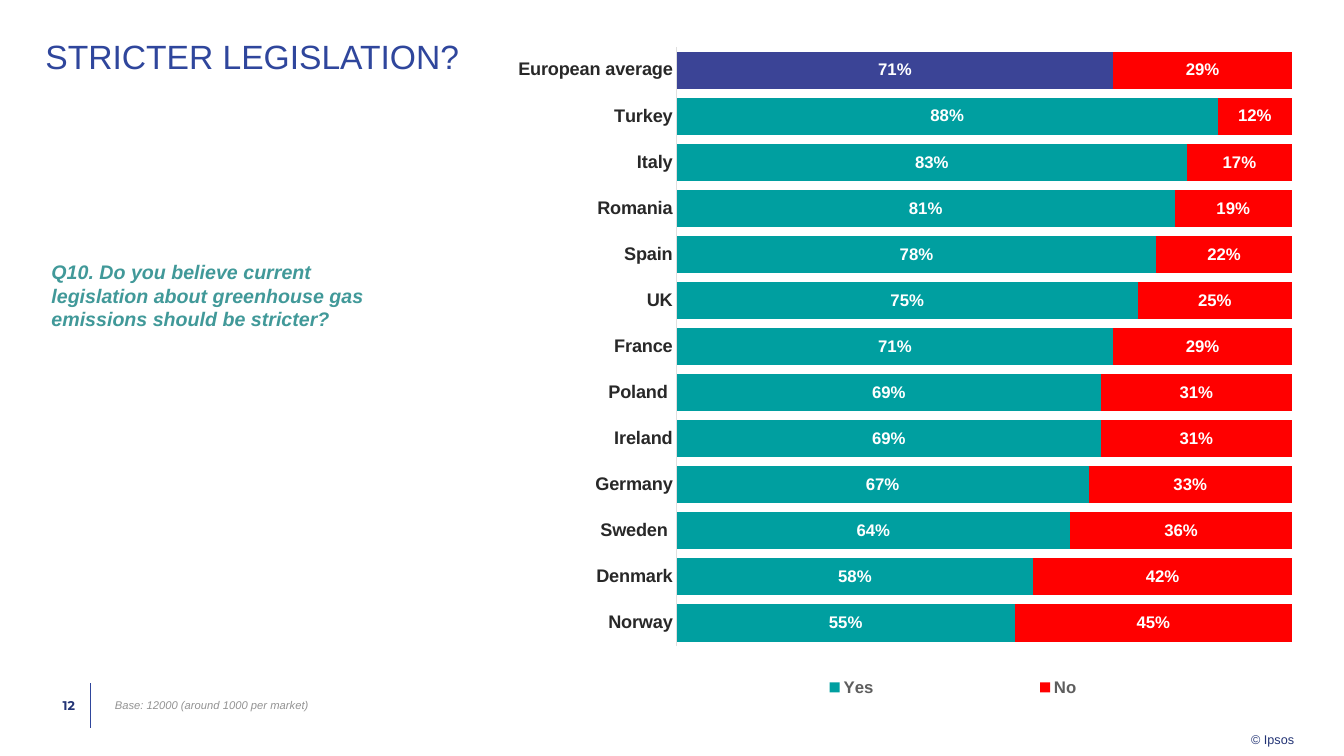
import lxml.etree
import pptx
import pptx.chart.data
import pptx.dml.color
import pptx.enum.chart
import pptx.enum.shapes
import pptx.enum.text
import pptx.oxml.ns
import pptx.util

PX = 9144
COLORS = {
    "title": "2F469C", "navy": "233475", "question": "419999",
    "base": "939393", "average": "3B4496", "yes": "009FA0", "no": "FF0000",
    "label": "282828", "legend": "5E5E5E", "axis": "DFDFDF", "white": "FFFFFF",
}
ANSWERS = [
    ("European average", 0.71, 0.29),
    ("Turkey", 0.88, 0.12),
    ("Italy", 0.83, 0.17),
    ("Romania", 0.81, 0.19),
    ("Spain", 0.78, 0.22),
    ("UK", 0.75, 0.25),
    ("France", 0.71, 0.29),
    ("Poland ", 0.69, 0.31),
    (" Ireland", 0.69, 0.31),
    ("Germany", 0.67, 0.33),
    ("Sweden ", 0.64, 0.36),
    ("Denmark", 0.58, 0.42),
    ("Norway", 0.55, 0.45),
]
ANCHOR = pptx.enum.text.MSO_ANCHOR


def style(font, size, color, bold=False, italic=False, name="Arial"):
    font.name = name
    font.size = pptx.util.Pt(size)
    font.bold = bold
    font.italic = italic
    font.color.rgb = pptx.dml.color.RGBColor.from_string(COLORS[color])


def place(parent, index, inner, **fractions):
    qn = pptx.oxml.ns.qn
    for old_layout in parent.findall(qn("c:layout")):
        parent.remove(old_layout)
    layout = lxml.etree.Element(qn("c:layout"))
    manual = lxml.etree.SubElement(layout, qn("c:manualLayout"))
    if inner:
        lxml.etree.SubElement(manual, qn("c:layoutTarget"), val="inner")
    for side in "xy":
        lxml.etree.SubElement(manual, qn(f"c:{side}Mode"), val="edge")
    for side, fraction in fractions.items():
        lxml.etree.SubElement(manual, qn(f"c:{side}"), val=str(fraction))
    parent.insert(index, layout)


deck = pptx.Presentation()
deck.slide_width = 1333 * PX
deck.slide_height = 750 * PX
page = deck.slides.add_slide(deck.slide_layouts[6])

divider = page.shapes.add_connector(
    pptx.enum.shapes.MSO_CONNECTOR.STRAIGHT, 90 * PX, 678 * PX, 90 * PX, 722 * PX)
divider.line.color.rgb = pptx.dml.color.RGBColor.from_string(COLORS["title"])
divider.line.width = pptx.util.Pt(0.5)
lxml.etree.SubElement(divider._element.spPr, pptx.oxml.ns.qn("a:effectLst"))

texts = [
    ("© Ipsos", (1241, 722, 43, 19), (0, 4, 0, 0), ANCHOR.TOP,
     dict(size=9, color="navy")),
    ("12 ", (45, 678, 45, 43), (0, 0, 12, 0), ANCHOR.MIDDLE,
     dict(size=9, color="navy", bold=True, name="Montserrat")),
    ("STRICTER LEGISLATION?", (45, 40, 469, 42), (0, 0, 0, 0), ANCHOR.TOP,
     dict(size=24, color="title")),
    ("Q10. Do you believe current legislation about greenhouse gas "
     "emissions should be stricter?", (51, 258, 331, 71), (0, 0, 0, 0), ANCHOR.TOP,
     dict(size=14, color="question", bold=True, italic=True)),
    ("Base: 12000 (around 1000 per market)", (104, 678, 278, 43),
     (10, 5, 10, 5), ANCHOR.MIDDLE, dict(size=8, color="base", italic=True)),
]
for words, area, insets, anchor, look in texts:
    box = page.shapes.add_textbox(*(length * PX for length in area))
    frame = box.text_frame
    frame.word_wrap = words != "© Ipsos"
    frame.vertical_anchor = anchor
    (frame.margin_left, frame.margin_top,
     frame.margin_right, frame.margin_bottom) = (inset * PX for inset in insets)
    para = frame.paragraphs[0]
    para.text = words
    style(para.font, **look)
    if look["color"] == "title":
        para.line_spacing = 0.9
    if words == "12 ":
        para.alignment = pptx.enum.text.PP_ALIGN.RIGHT

countries, yes_shares, no_shares = zip(*ANSWERS)
answer_data = pptx.chart.data.CategoryChartData(number_format="0%")
answer_data.categories = countries
answer_data.add_series("Yes", yes_shares)
answer_data.add_series("No", no_shares)
chart = page.shapes.add_chart(
    pptx.enum.chart.XL_CHART_TYPE.BAR_STACKED_100,
    514 * PX, 40 * PX, 775 * PX, 683 * PX, answer_data).chart
style(chart.font, 10, "label")
chart.has_title = False

country_axis = chart.category_axis
country_axis.reverse_order = True
country_axis.major_tick_mark = pptx.enum.chart.XL_TICK_MARK.NONE
country_axis.format.line.color.rgb = pptx.dml.color.RGBColor.from_string(COLORS["axis"])
country_axis.format.line.width = pptx.util.Pt(0.75)
style(country_axis.tick_labels.font, 13, "label", bold=True)
chart.value_axis.visible = False
chart.value_axis.has_major_gridlines = False

plot = chart.plots[0]
plot.gap_width = 24
plot.overlap = 100
plot.vary_by_categories = False
for series, color in zip(plot.series, ("yes", "no")):
    series.format.fill.solid()
    series.format.fill.fore_color.rgb = pptx.dml.color.RGBColor.from_string(COLORS[color])
    labels = series.data_labels
    labels.show_value = True
    labels.number_format = "0%"
    labels.number_format_is_linked = False
    labels.position = pptx.enum.chart.XL_LABEL_POSITION.CENTER
    style(labels.font, 12, "white", bold=True)
average_fill = plot.series[0].points[0].format.fill
average_fill.solid()
average_fill.fore_color.rgb = pptx.dml.color.RGBColor.from_string(COLORS["average"])

chart.has_legend = True
chart.legend.position = pptx.enum.chart.XL_LEGEND_POSITION.BOTTOM
chart.legend.include_in_layout = False
style(chart.legend.font, 12, "legend", bold=True)
place(chart.element.xpath(".//c:plotArea")[0], 0, True, x=0.2, y=0.01, w=0.79, h=0.87)
place(chart.element.xpath(".//c:legend")[0], 1, False, x=0.19, y=0.91, w=0.73, h=0.06)

deck.save("out.pptx")
